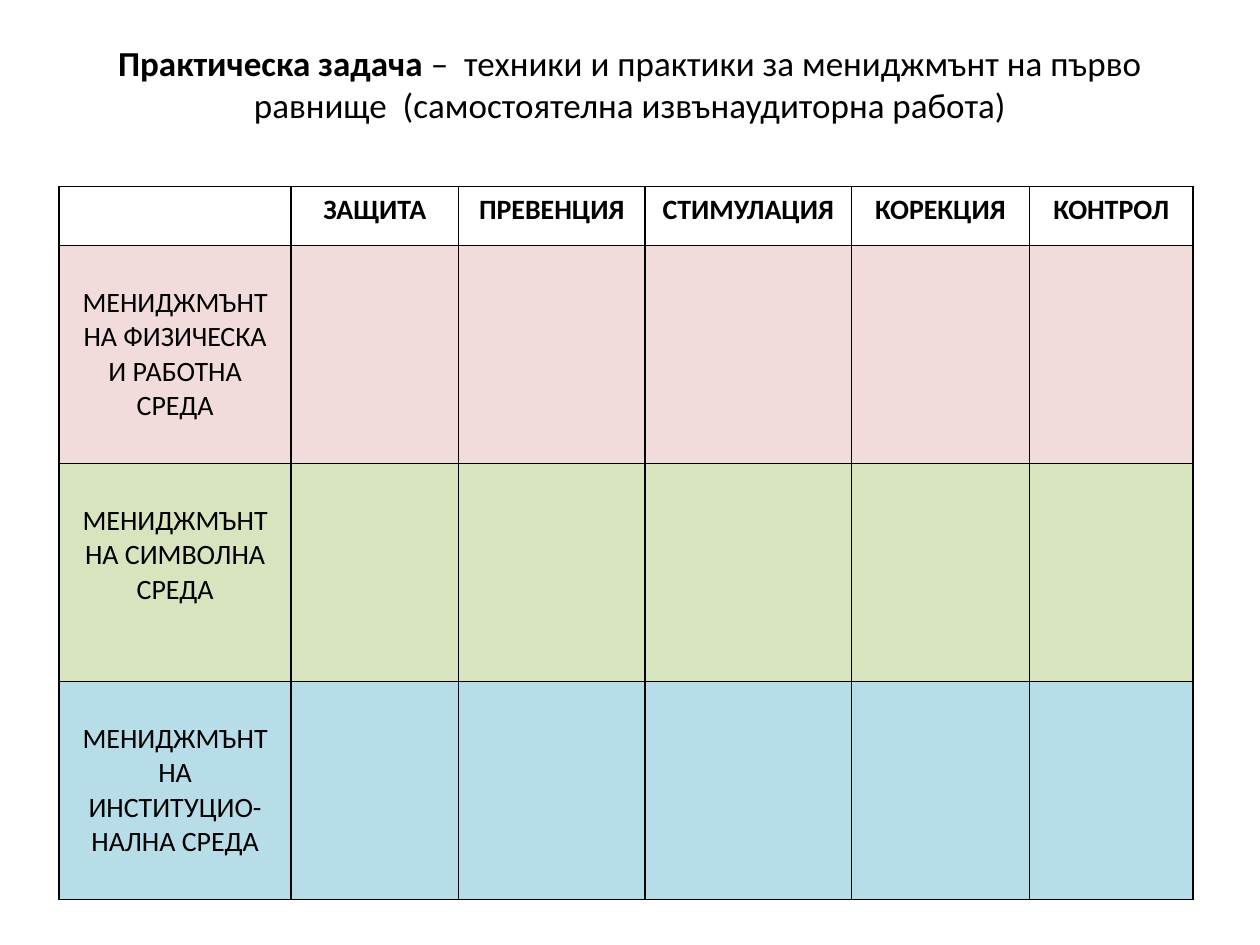
"""Build a slide with a blank worksheet table on classroom management techniques."""
from dataclasses import dataclass

from lxml import etree
from pptx import Presentation
from pptx.dml.color import RGBColor
from pptx.enum.text import MSO_ANCHOR, MSO_AUTO_SIZE, PP_ALIGN
from pptx.oxml.ns import qn
from pptx.util import Inches, Pt

CENTER = PP_ALIGN.CENTER
MIDDLE = MSO_ANCHOR.MIDDLE
NO_AUTOFIT = MSO_AUTO_SIZE.NONE

FONT = "Calibri"
BLACK = "000000"
WHITE = "FFFFFF"
BORDER_WIDTH = Pt(1)
BORDER_SIDES = ("a:lnL", "a:lnR", "a:lnT", "a:lnB")
COLUMN_WIDTHS = (1.84, 1.33, 1.48, 1.64, 1.41, 1.3)


@dataclass(frozen=True)
class Row:
    """One table row with its labels and look."""

    labels: tuple[str, ...]
    fill: str
    height: float = 1.73
    bold: bool = False
    top_margin: float = 0.32


ROWS = (
    Row(("", "ЗАЩИТА", "ПРЕВЕНЦИЯ", "СТИМУЛАЦИЯ", "КОРЕКЦИЯ", "КОНТРОЛ"),
        WHITE, height=0.47, bold=True, top_margin=0.05),
    Row(("МЕНИДЖМЪНТ НА ФИЗИЧЕСКА И РАБОТНА СРЕДА",), "F2DCDB"),
    Row(("МЕНИДЖМЪНТ НА СИМВОЛНА СРЕДА",), "D7E4BD"),
    Row(("МЕНИДЖМЪНТ НА ИНСТИТУЦИО-НАЛНА СРЕДА",), "B7DEE8"),
)

TITLE_SPANS = (
    ("Практическа задача ", True),
    ("–  техники и практики за мениджмънт на първо равнище  "
     "(самостоятелна извънаудиторна работа)", False),
)


def color(value: str) -> RGBColor:
    """Turn a hex string into a colour."""
    return RGBColor.from_string(value)


def set_attributes(target, values: dict) -> None:
    """Set each named attribute on the target."""
    for name, value in values.items():
        setattr(target, name, value)


def add_span(para, text: str, size: float, bold: bool) -> None:
    """Append a formatted run to a centred paragraph."""
    para.alignment = CENTER
    span = para.add_run()
    span.text = text
    set_attributes(span.font, {"name": FONT, "size": Pt(size), "bold": bold})
    span.font.color.rgb = color(BLACK)


def add_borders(cell) -> None:
    """Draw a solid line on all four sides of a cell."""
    properties = cell._tc.get_or_add_tcPr()
    for position, side in enumerate(BORDER_SIDES):
        line = etree.Element(qn(side), w=str(BORDER_WIDTH))
        fill = etree.SubElement(line, qn("a:solidFill"))
        etree.SubElement(fill, qn("a:srgbClr"), val=BLACK)
        properties.insert(position, line)


def fill_row(table, index: int, row: Row) -> None:
    """Format one table row and write its labels."""
    table.rows[index].height = Inches(row.height)
    for column in range(len(COLUMN_WIDTHS)):
        cell = table.cell(index, column)
        cell.fill.solid()
        cell.fill.fore_color.rgb = color(row.fill)
        cell.margin_top = Inches(row.top_margin)
        add_borders(cell)
        if column < len(row.labels) and row.labels[column]:
            para = cell.text_frame.paragraphs[0]
            add_span(para, row.labels[column], 16, row.bold)


def add_title(page) -> None:
    """Place and fill the title placeholder."""
    box = page.shapes.title
    set_attributes(box, {"left": Inches(0.5), "top": Inches(0.3),
                         "width": Inches(9), "height": Inches(0.72)})
    set_attributes(box.text_frame, {"word_wrap": True, "auto_size": NO_AUTOFIT,
                                    "vertical_anchor": MIDDLE})
    for text, bold in TITLE_SPANS:
        add_span(box.text_frame.paragraphs[0], text, 20, bold)


def add_worksheet(page) -> None:
    """Add the worksheet table."""
    height = sum(row.height for row in ROWS)
    table = page.shapes.add_table(
        len(ROWS), len(COLUMN_WIDTHS), Inches(0.47), Inches(1.48),
        Inches(sum(COLUMN_WIDTHS)), Inches(height)).table
    set_attributes(table, {"first_row": False, "horz_banding": False})
    for column, width in zip(table.columns, COLUMN_WIDTHS):
        column.width = Inches(width)
    for index, row in enumerate(ROWS):
        fill_row(table, index, row)


def main() -> None:
    """Build and save the deck."""
    deck = Presentation()
    set_attributes(deck, {"slide_width": Inches(10), "slide_height": Inches(7.5)})
    page = deck.slides.add_slide(deck.slide_layouts.get_by_name("Title Only"))
    add_title(page)
    add_worksheet(page)
    deck.save("out.pptx")


if __name__ == "__main__":
    main()
